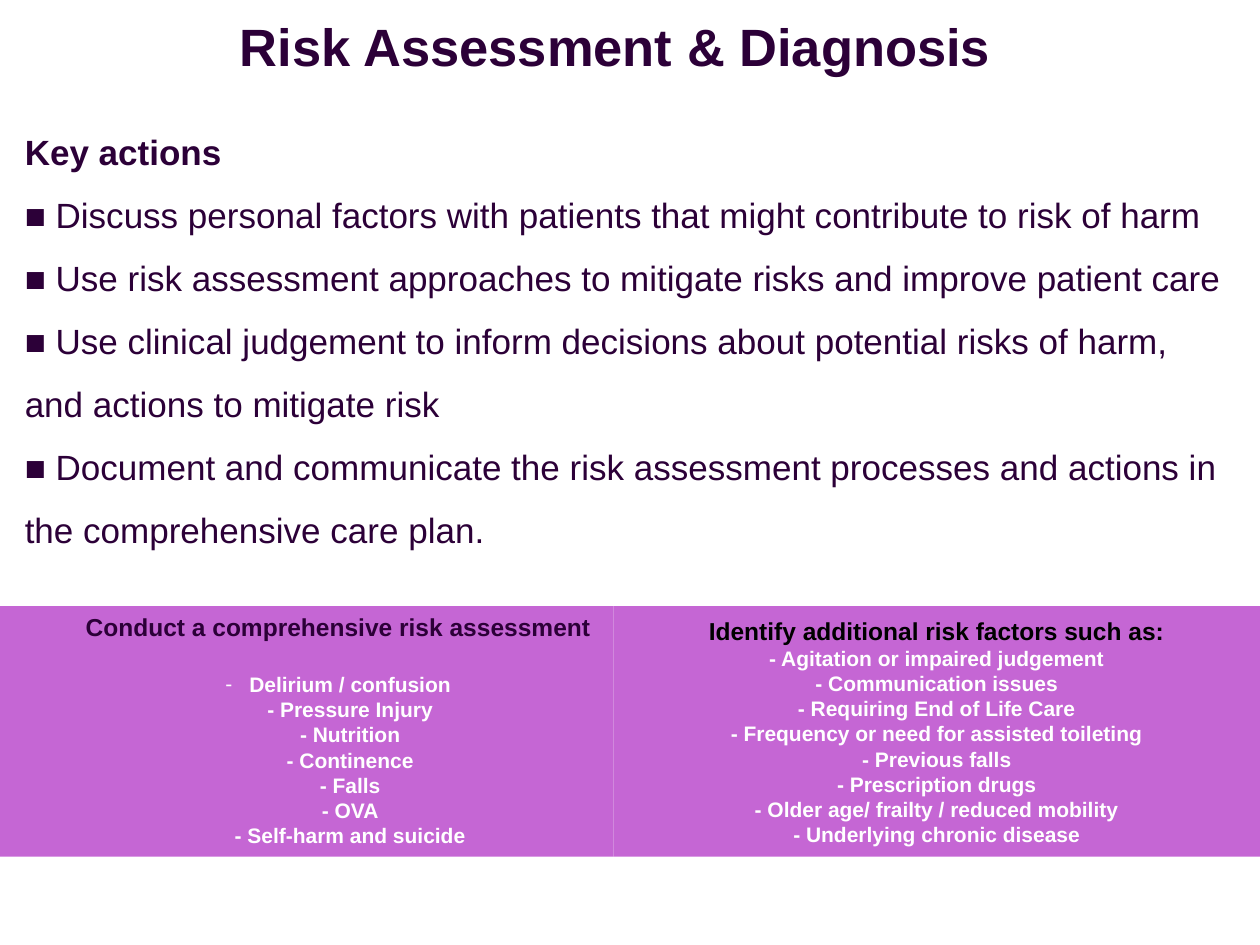
from copy import deepcopy

from lxml.etree import SubElement
from pptx import Presentation
from pptx.dml.color import RGBColor
from pptx.enum.shapes import MSO_SHAPE as Shape
from pptx.enum.text import MSO_ANCHOR as Anchor, PP_ALIGN as Align
from pptx.oxml.ns import qn
from pptx.util import Cm, Pt

PLUM = RGBColor(0x2C, 0x00, 0x38)
ORCHID = RGBColor(0xC5, 0x66, 0xD4)
BLACK = RGBColor(0x00, 0x00, 0x00)
WHITE = RGBColor(0xFF, 0xFF, 0xFF)

PAGE_WIDTH, PAGE_HEIGHT = 25.4, 19.05
PANEL_TOP, PANEL_HEIGHT, PANEL_SPLIT = 12.22, 5.05, 12.37

ACTIONS = [
    "Discuss personal factors with patients that might contribute to risk of harm",
    "Use risk assessment approaches to mitigate risks and improve patient care",
    "Use clinical judgement to inform decisions about potential risks of harm, "
    "and actions to mitigate risk",
    "Document and communicate the risk assessment processes and actions in "
    "the comprehensive care plan.",
]
ASSESSMENTS = ["Delirium / confusion", "Pressure Injury", "Nutrition",
               "Continence", "Falls", "OVA", "Self-harm and suicide"]
FACTORS = ["Agitation or impaired judgement", "Communication issues",
           "Requiring End of Life Care",
           "Frequency or need for assisted toileting", "Previous falls",
           "Prescription drugs", "Older age/ frailty / reduced mobility",
           "Underlying chronic disease"]


def write(para, text, size, color, bold=False, align=Align.LEFT):
    """Fill a paragraph; line breaks take the format of the text."""
    para.text = text
    para.alignment = align
    for span in para.runs:
        span.font.name = "Arial"
        span.font.size = Pt(size)
        span.font.bold = bold
        span.font.color.rgb = color
    for line_break in para._p.findall(qn("a:br")):
        line_break.append(deepcopy(para.runs[0].font._element))


def indent(para, left, first=0):
    props = para._p.get_or_add_pPr()
    props.set("marL", str(Cm(left)))
    props.set("indent", str(Cm(first)))
    return props


def add_text_frame(page, box):
    frame = page.shapes.add_textbox(*map(Cm, box)).text_frame
    frame.word_wrap = True
    return frame


def add_title(page, box):
    frame = add_text_frame(page, box)
    frame.margin_left = frame.margin_right = 0
    frame.margin_top = frame.margin_bottom = 0
    para = frame.paragraphs[0]
    write(para, "Risk Assessment & Diagnosis", 30, PLUM, True, Align.CENTER)
    para.line_spacing = 0.8


def add_actions(page, box):
    frame = add_text_frame(page, box)
    write(frame.paragraphs[0], "Key actions", 20, PLUM, bold=True)
    for action in ACTIONS:
        write(frame.add_paragraph(), f"■ {action}", 20, PLUM)
    for para in frame.paragraphs:
        para.line_spacing = 1.5


def add_panel(page, box, heading, color, items, anchor):
    """Draw a filled panel; return its heading and list paragraphs."""
    panel = page.shapes.add_shape(Shape.RECTANGLE, *map(Cm, box))
    panel.shadow.inherit = False
    panel.fill.solid()
    panel.fill.fore_color.rgb = ORCHID
    panel.line.fill.background()
    frame = panel.text_frame
    frame.word_wrap = True
    frame.vertical_anchor = anchor
    title, listing = frame.paragraphs[0], frame.add_paragraph()
    write(title, heading, 14, color, True, Align.CENTER)
    write(listing, "\v".join(items), 12, WHITE, True, Align.CENTER)
    return title, listing


def add_assessment_panel(page, box):
    # The first item has a real bullet, the others a typed dash
    items = ASSESSMENTS[:1] + [f"- {item}" for item in ASSESSMENTS[1:]]
    title, listing = add_panel(page, box, "Conduct a comprehensive risk assessment",
                               PLUM, items, Anchor.TOP)
    indent(title, 1.27)
    title.space_after = Pt(17)
    props = indent(listing, 1.75, -0.48)
    SubElement(props, qn("a:buFont"), typeface="Arial")
    SubElement(props, qn("a:buChar"), char="-")


def add_factor_panel(page, box):
    add_panel(page, box, "Identify additional risk factors such as:", BLACK,
              [f"- {item}" for item in FACTORS], Anchor.MIDDLE)


def main():
    deck = Presentation()
    deck.slide_width, deck.slide_height = Cm(PAGE_WIDTH), Cm(PAGE_HEIGHT)
    page = deck.slides.add_slide(deck.slide_layouts[6])

    add_title(page, (1.04, 0.53, 22.73, 2.59))
    add_actions(page, (0.25, 2.08, 24.92, 9.25))
    add_factor_panel(page, (PANEL_SPLIT, PANEL_TOP,
                            PAGE_WIDTH - PANEL_SPLIT, PANEL_HEIGHT))
    add_assessment_panel(page, (0, PANEL_TOP, PANEL_SPLIT, PANEL_HEIGHT))

    deck.save("out.pptx")


if __name__ == "__main__":
    main()
